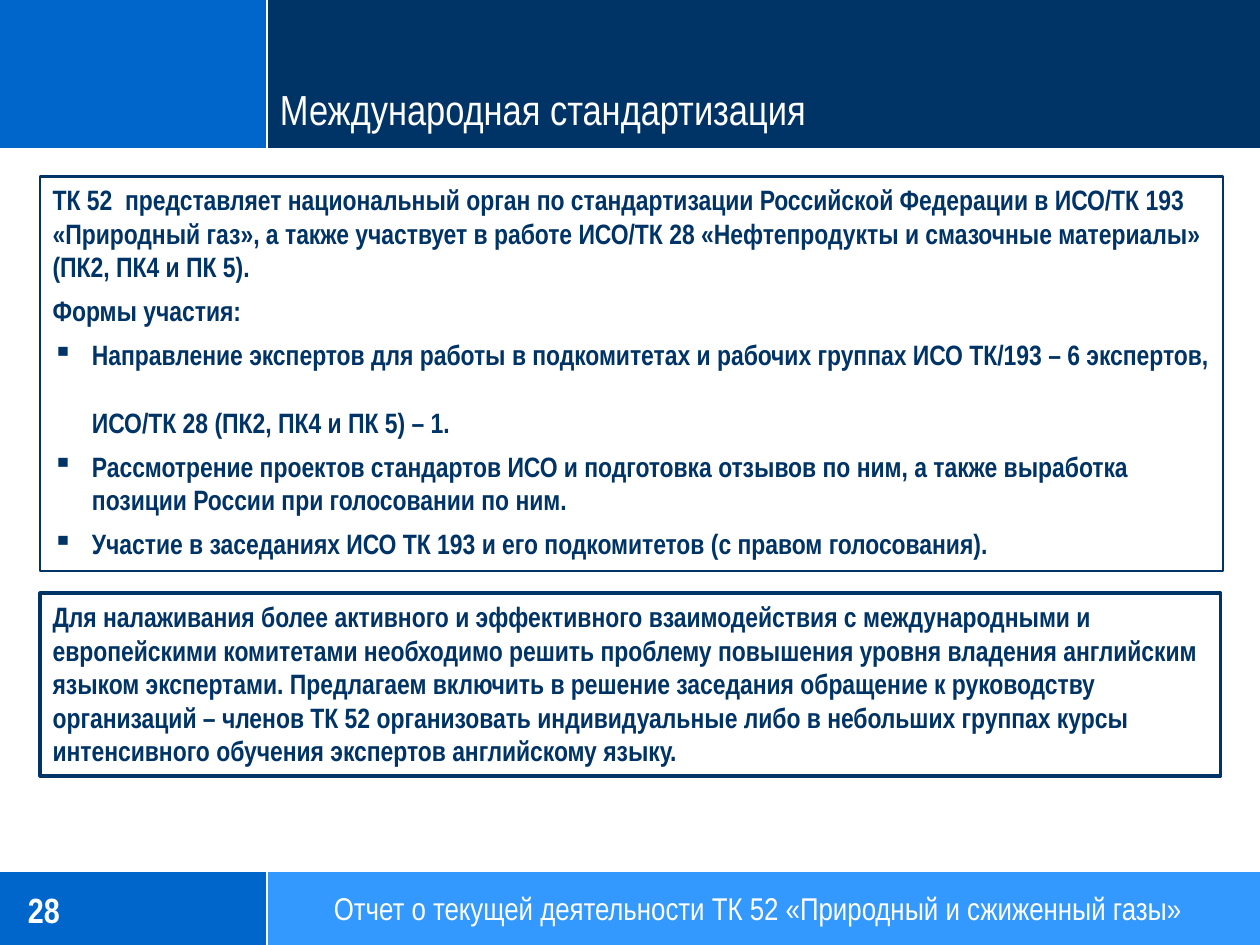
from lxml import etree
from pptx import Presentation
from pptx.dml.color import RGBColor
from pptx.enum.shapes import MSO_CONNECTOR, MSO_SHAPE
from pptx.enum.text import MSO_ANCHOR, MSO_AUTO_SIZE, PP_ALIGN
from pptx.oxml.ns import qn
from pptx.util import Pt

RECTANGLE = MSO_SHAPE.RECTANGLE
STRAIGHT = MSO_CONNECTOR.STRAIGHT
LEFT, CENTER = PP_ALIGN.LEFT, PP_ALIGN.CENTER
TOP, MIDDLE, BOTTOM = MSO_ANCHOR.TOP, MSO_ANCHOR.MIDDLE, MSO_ANCHOR.BOTTOM
FIXED, GROW = MSO_AUTO_SIZE.NONE, MSO_AUTO_SIZE.SHAPE_TO_FIT_TEXT

COLORS = {
    "white": "FFFFFF",
    "navy": "003366",
    "blue": "0066CC",
    "light": "3399FF",
}
FONT = "Arial Narrow"
WIDTH, HEIGHT = 720, 540
SPLIT = 152.8
HEADER_BOTTOM, FOOTER_TOP = 85, 497.5
INDENT = 22.5


def rgb(name):
    return RGBColor.from_string(COLORS[name])


def write(frame, texts, size, color, bold=False, align=LEFT, anchor=TOP, gap=0):
    """Fill a text frame; a text that starts with ▪ becomes a bullet paragraph."""
    frame.word_wrap = True
    frame.vertical_anchor = anchor
    for index, text in enumerate(texts):
        para = frame.paragraphs[0] if index == 0 else frame.add_paragraph()
        para.text = text.removeprefix("▪")
        para.alignment = align
        para.space_after = Pt(gap)
        if text.startswith("▪"):
            properties = para._p.get_or_add_pPr()
            properties.set("marL", str(Pt(INDENT)))
            properties.set("indent", str(-Pt(INDENT)))
            etree.SubElement(properties, qn("a:buChar")).set("char", "▪")
        para.font.name = FONT
        para.font.size = Pt(size)
        para.font.bold = bold
        para.font.color.rgb = rgb(color)


deck = Presentation()
deck.slide_width, deck.slide_height = Pt(WIDTH), Pt(HEIGHT)
page = deck.slides.add_slide(deck.slide_layouts[5])

# Header and footer bands
bands = [
    (0, FOOTER_TOP, SPLIT, HEIGHT, "blue"),
    (SPLIT, FOOTER_TOP, WIDTH, HEIGHT, "light"),
    (0, 0, SPLIT, HEADER_BOTTOM, "blue"),
    (SPLIT, 0, WIDTH, HEADER_BOTTOM, "navy"),
]
for left, top, right, bottom, color in bands:
    band = page.shapes.add_shape(RECTANGLE, Pt(left), Pt(top), Pt(right - left), Pt(bottom - top))
    band.shadow.inherit = False
    band.fill.solid()
    band.fill.fore_color.rgb = rgb(color)
    band.line.fill.background()

dividers = [
    (SPLIT, FOOTER_TOP, SPLIT, HEIGHT),
    (SPLIT, 0, SPLIT, HEADER_BOTTOM),
    (0, FOOTER_TOP, WIDTH, FOOTER_TOP),
    (0, HEADER_BOTTOM, WIDTH, HEADER_BOTTOM),
]
for ends in dividers:
    divider = page.shapes.add_connector(STRAIGHT, *map(Pt, ends))
    divider.line.color.rgb = rgb("white")
    divider.line.width = Pt(1.25)
    etree.SubElement(divider._element.spPr, qn("a:effectLst"))

# Title, brought in front of the header band
title = page.shapes.title
title.left, title.top, title.width, title.height = Pt(160), Pt(40.3), Pt(558.7), Pt(36)
title._element.getparent().append(title._element)

number = page.shapes.add_textbox(Pt(16), Pt(501), Pt(117.4), Pt(37.5))
footer = page.shapes.add_textbox(Pt(164), Pt(FOOTER_TOP), Pt(538), Pt(HEIGHT - FOOTER_TOP))
labels = [
    (title, "Международная стандартизация", 24, False, LEFT, BOTTOM),
    (number, "28", 20, True, LEFT, MIDDLE),
    (footer, "Отчет о текущей деятельности ТК 52 «Природный и сжиженный газы»", 18, False, CENTER, MIDDLE),
]
for label, text, size, bold, align, anchor in labels:
    frame = label.text_frame
    frame.margin_left = frame.margin_right = frame.margin_top = frame.margin_bottom = 0
    frame.auto_size = FIXED
    write(frame, [text], size, "white", bold, align, anchor)

# Framed body texts
participation = [
    "ТК 52  представляет национальный орган по стандартизации Российской Федерации в ИСО/ТК 193 "
    "«Природный газ», а также участвует в работе ИСО/ТК 28 «Нефтепродукты и смазочные материалы» "
    "(ПК2, ПК4 и ПК 5).",
    "Формы участия:",
    "▪Направление экспертов для работы в подкомитетах и рабочих группах ИСО ТК/193 – 6 экспертов, "
    "\vИСО/ТК 28 (ПК2, ПК4 и ПК 5) – 1.",
    "▪Рассмотрение проектов стандартов ИСО и подготовка отзывов по ним, а также выработка "
    "позиции России при голосовании по ним.",
    "▪Участие в заседаниях ИСО ТК 193 и его подкомитетов (с правом голосования).",
]
proposal = [
    "Для налаживания более активного и эффективного взаимодействия с международными и "
    "европейскими комитетами необходимо решить проблему повышения уровня владения английским "
    "языком экспертами. Предлагаем включить в решение заседания обращение к руководству "
    "организаций – членов ТК 52 организовать индивидуальные либо в небольших группах курсы "
    "интенсивного обучения экспертов английскому языку.",
]
panels = [
    (100.8, 676, 225.5, 1.5, 6, participation),
    (339, 674.6, 104.4, 2, 0, proposal),
]
for top, width, height, border, gap, texts in panels:
    panel = page.shapes.add_shape(RECTANGLE, Pt(23), Pt(top), Pt(width), Pt(height))
    panel.shadow.inherit = False
    panel.fill.background()
    panel.line.color.rgb = rgb("navy")
    panel.line.width = Pt(border)
    panel.text_frame.auto_size = GROW
    write(panel.text_frame, texts, 16, "navy", bold=True, gap=gap)

deck.save("out.pptx")
